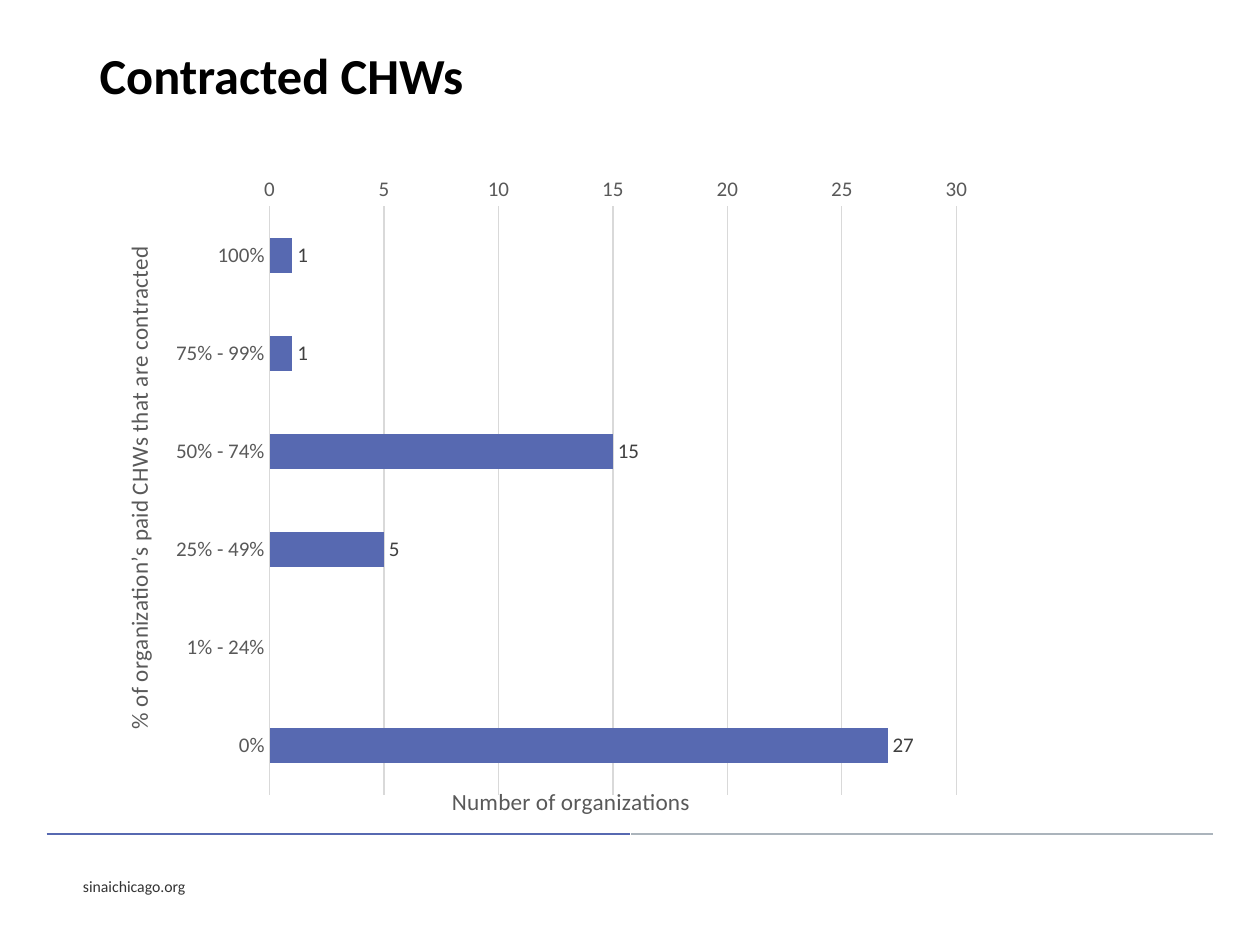
"""Build the Contracted CHWs slide with its bar chart."""
from lxml import etree
from pptx import Presentation
from pptx import util as u
from pptx.chart import data
from pptx.dml.color import RGBColor
from pptx.enum import chart as ch, shapes, text
from pptx.oxml.ns import qn

HUES = {"bar": "5769B1", "rule": "ABB4BC", "grid": "D9D9D9", "axis": "595959",
        "label": "404040", "foot": "333333", "title": "000000"}


def style(font, size, hue, bold=False):
    font.name, font.size, font.bold = "Calibri", u.Pt(size), bold
    font.color.rgb = RGBColor.from_string(HUES[hue])


def place(part, spot, **marks):
    for old in part.findall(qn("c:layout")):
        part.remove(old)
    box = etree.Element(qn("c:layout"))
    part.insert(spot, box)
    frame = etree.SubElement(box, qn("c:manualLayout"))
    for tag, val in marks.items():
        etree.SubElement(frame, qn("c:" + tag)).set("val", str(val))


deck = Presentation()
deck.slide_width, deck.slide_height = u.Inches(10), u.Inches(7.5)
slide = deck.slides.add_slide(deck.slide_layouts[5])

head = slide.shapes.title
head.left, head.top = u.Inches(0.69), u.Inches(0.34)
head.width, head.height = u.Inches(8.72), u.Inches(0.56)
frame = head.text_frame
frame.text = "Contracted CHWs"
frame.vertical_anchor = text.MSO_ANCHOR.MIDDLE
line = frame.paragraphs[0]
line.alignment, line.line_spacing = text.PP_ALIGN.LEFT, 0.9
style(line.runs[0].font, 28.8, "title", True)

for start, end, hue in ((0.37, 5, "bar"), (5.01, 9.63, "rule")):
    rule = slide.shapes.add_connector(
        shapes.MSO_CONNECTOR.STRAIGHT,
        u.Inches(start), u.Inches(6.62), u.Inches(end), u.Inches(6.62))
    rule.line.width = u.Pt(1)
    rule.line.color.rgb = RGBColor.from_string(HUES[hue])
    etree.SubElement(rule._element.spPr, qn("a:effectLst"))

foot = slide.shapes.add_textbox(
    u.Inches(0.56), u.Inches(6.91), u.Inches(1.03), u.Inches(0.25))
foot.text_frame.text = "sinaichicago.org"
foot.text_frame.word_wrap = False
style(foot.text_frame.paragraphs[0].runs[0].font, 9, "foot")

table = data.CategoryChartData()
table.categories = ["100%", "75% - 99%", "50% - 74%", "25% - 49%", "1% - 24%", "0%"]
table.add_series("Series 1", (1, 1, 15, 5, None, 27))
chart = slide.shapes.add_chart(
    ch.XL_CHART_TYPE.BAR_CLUSTERED, u.Inches(0.4), u.Inches(0.9),
    u.Inches(9.01), u.Inches(5.64), table).chart
chart.has_legend = chart.has_title = False
style(chart.font, 10, "title")
place(chart.plots[0]._element.getparent(), 0, layoutTarget="inner",
      xMode="edge", yMode="edge", x=0.193, y=0.132, w=0.605, h=0.837)

cat, val = chart.category_axis, chart.value_axis
for axis, name, x, y in (
        (cat, "% of organization’s paid CHWs that are contracted", 0.06, 0.19),
        (val, "Number of organizations", 0.35, 0.95)):
    axis.major_tick_mark = axis.minor_tick_mark = ch.XL_TICK_MARK.NONE
    style(axis.tick_labels.font, 12, "axis")
    label = axis.axis_title
    label.text_frame.text = name
    style(label.text_frame.paragraphs[0].runs[0].font, 13.3, "axis")
    place(label._element, 1, xMode="edge", yMode="edge", x=x, y=y)
turn = cat.axis_title.text_frame._txBody.find(qn("a:bodyPr"))
turn.set("rot", "-5400000")
turn.set("vert", "horz")

cat.reverse_order = True
val.minimum_scale, val.maximum_scale, val.major_unit = 0, 30, 5
val.has_major_gridlines = True
val.format.line.fill.background()
for stroke in (cat.format.line, val.major_gridlines.format.line):
    stroke.width = u.Pt(0.75)
    stroke.color.rgb = RGBColor.from_string(HUES["grid"])

plot = chart.plots[0]
plot.gap_width, plot.vary_by_categories = 182, False
bars = plot.series[0]
bars.format.fill.solid()
bars.format.fill.fore_color.rgb = RGBColor.from_string(HUES["bar"])
tags = bars.data_labels
tags.show_value = True
tags.position = ch.XL_LABEL_POSITION.OUTSIDE_END
style(tags.font, 12, "label")

deck.save("out.pptx")
